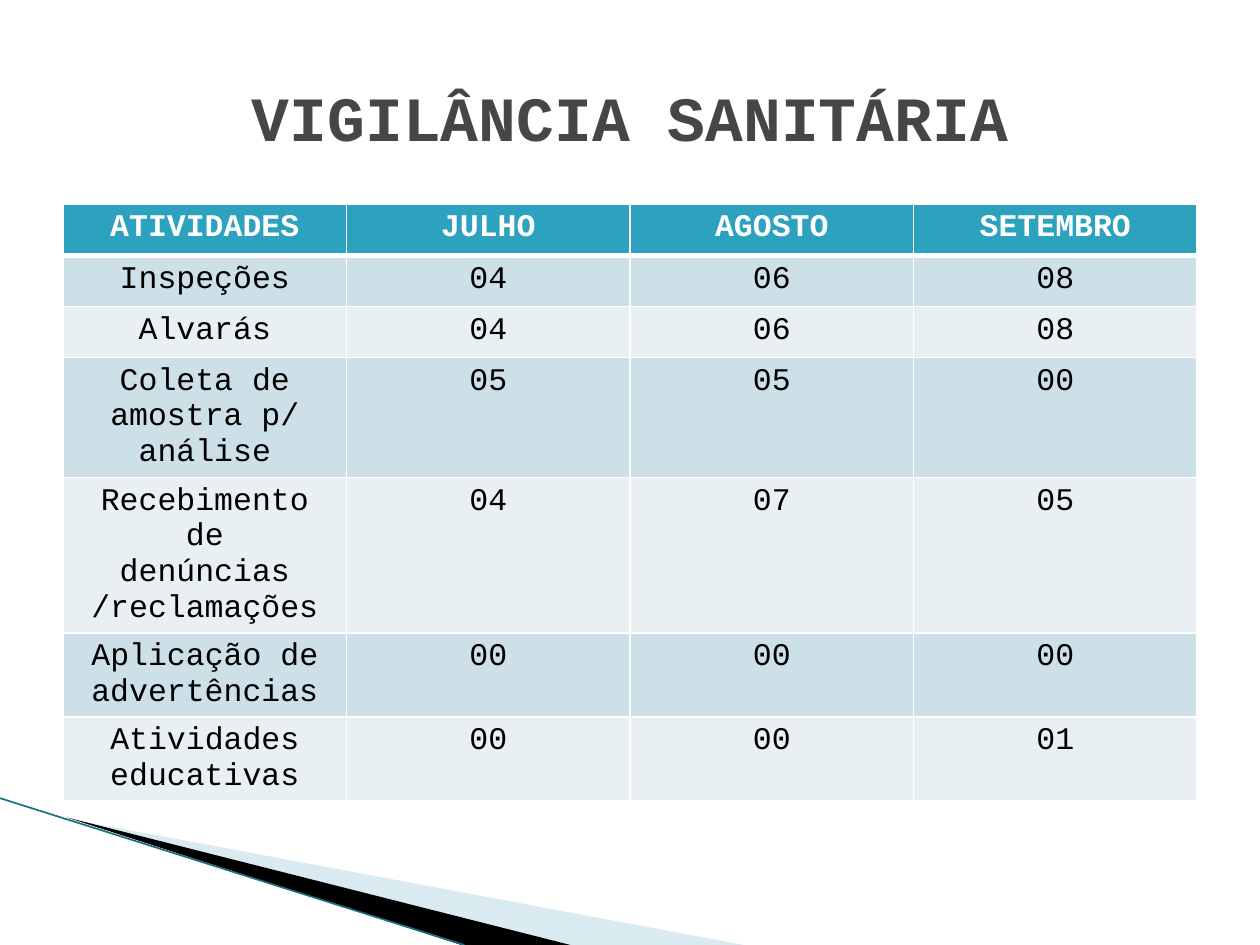
import lxml.etree
import pptx
import pptx.dml.color
import pptx.enum.shapes
import pptx.enum.text
import pptx.oxml.ns
import pptx.util

Cm = pptx.util.Cm
Pt = pptx.util.Pt
RGBColor = pptx.dml.color.RGBColor
qn = pptx.oxml.ns.qn

WHITE = RGBColor(0xFF, 0xFF, 0xFF)
BLACK = RGBColor(0x00, 0x00, 0x00)
GRAY = RGBColor(0x46, 0x46, 0x46)
TEAL = RGBColor(0x2D, 0xA2, 0xBF)
DARK_TEAL = RGBColor(0x1B, 0x6F, 0x83)
PALE_BLUE = RGBColor(0xA0, 0xCB, 0xDC)
BAND_DARK = RGBColor(0xCD, 0xE0, 0xE8)
BAND_LIGHT = RGBColor(0xE8, 0xF0, 0xF4)

ROWS = [
    ("ATIVIDADES", "JULHO", "AGOSTO", "SETEMBRO"),
    ("Inspeções", "04", "06", "08"),
    ("Alvarás", "04", "06", "08"),
    ("Coleta de amostra p/ análise", "05", "05", "00"),
    ("Recebimento de denúncias /reclamações", "04", "07", "05"),
    ("Aplicação de advertências", "00", "00", "00"),
    ("Atividades educativas", "00", "00", "01"),
]


class SlideBuilder:
    font = "Courier New"

    def __init__(self, prs):
        self.s = prs.slides.add_slide(prs.slide_layouts[6])

    def add_text(self, tf, text, size, color, bold):
        p = tf.paragraphs[0]
        p.alignment = pptx.enum.text.PP_ALIGN.CENTER
        r = p.add_run()
        r.text = text
        r.font.name = self.font
        r.font.size = Pt(size)
        r.font.bold = bold
        r.font.color.rgb = color

    def title(self, text, x, y, w, h):
        tf = self.s.shapes.add_textbox(Cm(x), Cm(y), Cm(w), Cm(h)).text_frame
        tf.word_wrap = True
        tf.vertical_anchor = pptx.enum.text.MSO_ANCHOR.MIDDLE
        self.add_text(tf, text, 36, GRAY, True)

    def wedge(self, points, color, opacity=100):
        start, *rest = [(Cm(x), Cm(y)) for x, y in points]
        fb = self.s.shapes.build_freeform(*start)
        fb.add_line_segments(rest, close=True)
        sp = fb.convert_to_shape()
        sp.shadow.inherit = False
        sp.line.fill.background()
        sp.fill.solid()
        sp.fill.fore_color.rgb = color
        if opacity < 100:
            clr = sp._element.spPr.find(qn("a:solidFill"))[0]
            lxml.etree.SubElement(clr, qn("a:alpha"), val=str(opacity * 1000))

    def line(self, x1, y1, x2, y2, color, width):
        cn = self.s.shapes.add_connector(
            pptx.enum.shapes.MSO_CONNECTOR.STRAIGHT, Cm(x1), Cm(y1), Cm(x2), Cm(y2))
        cn.line.color.rgb = color
        cn.line.width = Pt(width)
        lxml.etree.SubElement(cn._element.spPr, qn("a:effectLst"))

    def border(self, cell, side, width):
        ln = lxml.etree.SubElement(
            cell._tc.get_or_add_tcPr(), qn("a:ln" + side), w=str(int(Pt(width))))
        fill = lxml.etree.SubElement(ln, qn("a:solidFill"))
        lxml.etree.SubElement(fill, qn("a:srgbClr"), val=str(WHITE))

    def table(self, rows, x, y, w, row_height):
        tbl = self.s.shapes.add_table(
            len(rows), len(rows[0]), Cm(x), Cm(y), Cm(w), Cm(row_height * len(rows))).table
        for i, row in enumerate(rows):
            header = i == 0
            band = BAND_DARK if i % 2 else BAND_LIGHT
            for j, text in enumerate(row):
                cell = tbl.cell(i, j)
                for side in "LRTB":
                    thick = (i, side) in ((0, "B"), (1, "T"))
                    self.border(cell, side, 3 if thick else 1)
                cell.fill.solid()
                cell.fill.fore_color.rgb = TEAL if header else band
                self.add_text(cell.text_frame, text, 18, WHITE if header else BLACK, header)


def main():
    prs = pptx.Presentation()
    prs.slide_width = Cm(25.4)
    prs.slide_height = Cm(19.05)
    b = SlideBuilder(prs)
    b.wedge([(1.4, 16.51), (14.99, 19.05), (11.51, 19.05)], PALE_BLUE, 40)
    b.wedge([(1.35, 16.48), (11.5, 19.05), (9.3, 19.05)], BLACK)
    b.line(0, 16.09, 9.36, 19.05, DARK_TEAL, 0.95)
    b.table(ROWS, 1.27, 4.12, 22.86, 1.03)
    b.title("VIGILÂNCIA SANITÁRIA", 1.27, 0.76, 22.86, 3.18)
    prs.save("out.pptx")


if __name__ == "__main__":
    main()
